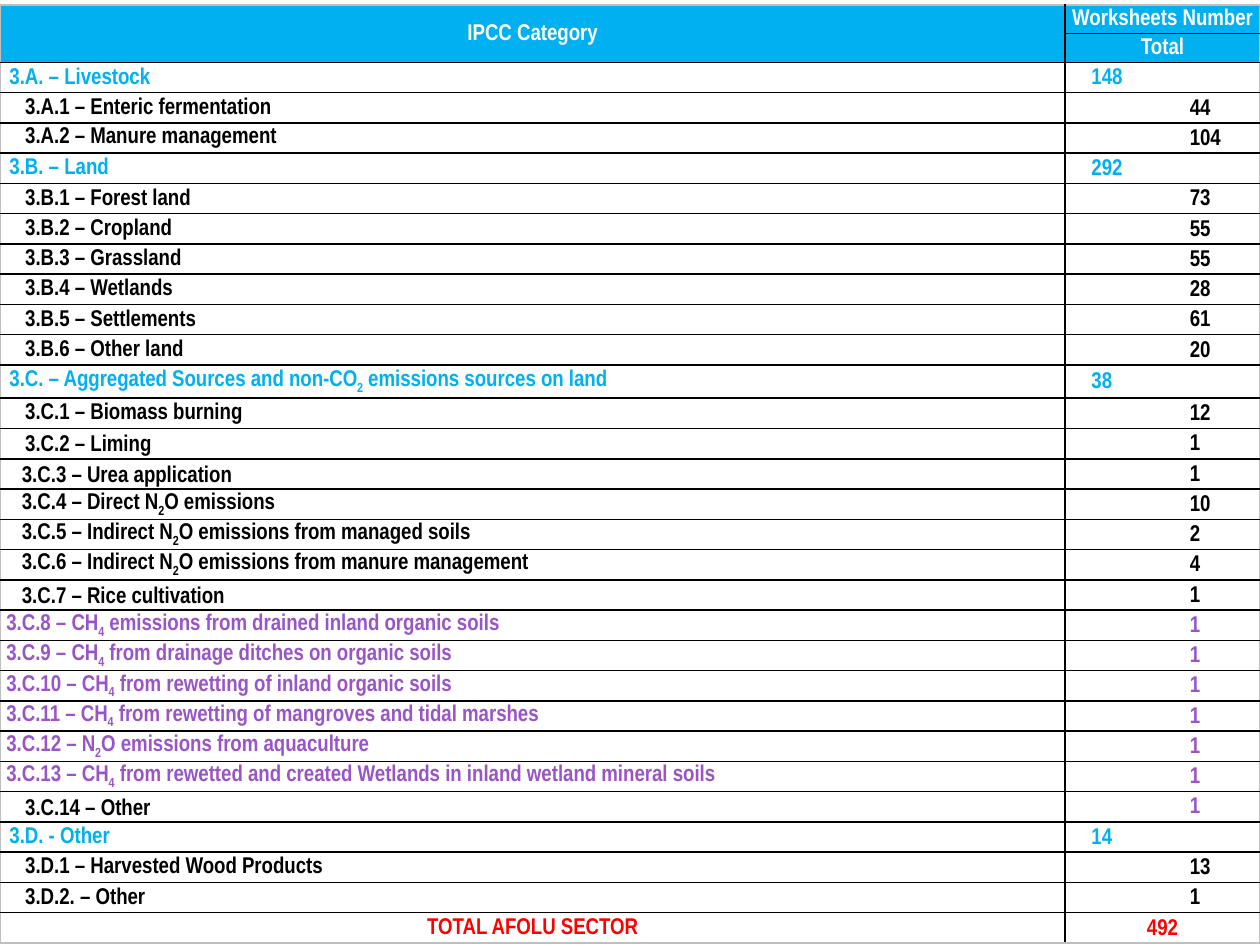
from dataclasses import dataclass, replace
from pptx import Presentation
from pptx.dml.color import RGBColor
from pptx.enum.text import MSO_ANCHOR, PP_ALIGN
from pptx.oxml import parse_xml
from pptx.oxml.ns import nsdecls
from pptx.util import Pt

WHITE = RGBColor(0xFF, 0xFF, 0xFF)
BLACK = RGBColor(0, 0, 0)
BLUE = RGBColor(0x00, 0xB0, 0xF0)
PURPLE = RGBColor(0x99, 0x54, 0xC8)
RED = RGBColor(0xFF, 0, 0)
GRAY = RGBColor(0xBF, 0xBF, 0xBF)

NARROW, WIDE = (0.72, 0.72), (5.4, 0)  # side and top cell margins


@dataclass(frozen=True)
class RowStyle:
    color: RGBColor
    number_color: RGBColor
    margins: tuple = WIDE
    indent: float = 9
    number_indent: float = 70.56
    spacing: object = 1.07
    align: PP_ALIGN = PP_ALIGN.LEFT


ITEM = RowStyle(BLACK, BLACK)
TIGHT = replace(ITEM, spacing=None)
SECTION = RowStyle(BLUE, BLUE, indent=0, number_indent=14.4)
FIXED = replace(ITEM, spacing=Pt(15))
GAS = replace(FIXED, margins=NARROW, indent=11.8)
NEW = replace(GAS, color=PURPLE, number_color=PURPLE, indent=2.9)
LAST = replace(FIXED, number_color=PURPLE)
TOTAL = RowStyle(RED, RED, indent=0, number_indent=0, align=PP_ALIGN.CENTER)

# Category ("_" lowers the next character), number of worksheets, style
ROWS = [
    ("3.A. – Livestock", 148, SECTION),
    ("3.A.1 – Enteric fermentation", 44, ITEM),
    ("3.A.2 – Manure management", 104, TIGHT),
    ("3.B. – Land", 292, SECTION),
    ("3.B.1 – Forest land", 73, ITEM),
    ("3.B.2 – Cropland", 55, ITEM),
    ("3.B.3 – Grassland", 55, ITEM),
    ("3.B.4 – Wetlands", 28, ITEM),
    ("3.B.5 – Settlements", 61, ITEM),
    ("3.B.6 – Other land", 20, ITEM),
    ("3.C. – Aggregated Sources and non-CO_2 emissions sources on land", 38, SECTION),
    ("3.C.1 – Biomass burning", 12, ITEM),
    ("3.C.2 – Liming", 1, FIXED),
    ("3.C.3 – Urea application", 1, GAS),
    ("3.C.4 – Direct N_2O emissions", 10, GAS),
    ("3.C.5 – Indirect N_2O emissions from managed soils", 2, GAS),
    ("3.C.6 – Indirect N_2O emissions from manure management", 4, GAS),
    ("3.C.7 – Rice cultivation", 1, GAS),
    ("3.C.8 – CH_4 emissions from drained inland organic soils", 1, NEW),
    ("3.C.9 – CH_4 from drainage ditches on organic soils", 1, NEW),
    ("3.C.10 – CH_4 from rewetting of inland organic soils", 1, NEW),
    ("3.C.11 – CH_4 from rewetting of mangroves and tidal marshes", 1, NEW),
    ("3.C.12 – N_2O emissions from aquaculture", 1, NEW),
    ("3.C.13 – CH_4 from rewetted and created Wetlands in inland wetland mineral soils", 1, NEW),
    ("3.C.14 – Other", 1, LAST),
    ("3.D. - Other", 14, SECTION),
    ("3.D.1 – Harvested Wood Products", 13, ITEM),
    ("3.D.2. – Other", 1, ITEM),
    ("TOTAL AFOLU SECTOR", 492, TOTAL),
]
HEADER_ROWS = 2
HEADER_HEIGHT, ROW_HEIGHT, TALL_HEIGHT = 16.4, 17.3, 19
TALL_ROW = 10  # the section whose title holds a subscript


class SlideBuilder:
    font, size = "Arial Narrow", Pt(13)

    def __init__(self, prs):
        self.slide = prs.slides.add_slide(prs.slide_layouts[6])

    def table(self, left, top, widths, heights):
        table = self.slide.shapes.add_table(
            len(heights), len(widths), Pt(left), Pt(top),
            Pt(sum(widths)), Pt(sum(heights))).table
        for column, width in zip(table.columns, widths):
            column.width = Pt(width)
        for row, height in zip(table.rows, heights):
            row.height = Pt(height)
        # Black rules inside, gray frame outside
        for i in range(len(heights)):
            for j in range(len(widths)):
                edges = {"L": j == 0, "R": j == len(widths) - 1,
                         "T": i == 0, "B": i == len(heights) - 1}
                self.borders(table.cell(i, j), edges)
        return table

    def borders(self, cell, edges):
        tc_pr = cell._tc.get_or_add_tcPr()
        for side, outer in edges.items():
            tc_pr.append(parse_xml(
                f'<a:ln{side} {nsdecls("a")} w="{Pt(1)}"><a:solidFill>'
                f'<a:srgbClr val="{GRAY if outer else BLACK}"/></a:solidFill></a:ln{side}>'))

    def cell(self, cell, text, color, fill=WHITE, margins=NARROW, indent=0,
             spacing=None, align=PP_ALIGN.LEFT):
        cell.fill.solid()
        cell.fill.fore_color.rgb = fill
        cell.vertical_anchor = MSO_ANCHOR.MIDDLE
        side, top = margins
        cell.margin_left = cell.margin_right = Pt(side)
        cell.margin_top, cell.margin_bottom = Pt(top), 0
        p = cell.text_frame.paragraphs[0]
        p.alignment = align
        if indent:
            p._p.get_or_add_pPr().set("marL", str(Pt(indent)))
        if spacing:
            p.line_spacing = spacing
            p.space_after = Pt(8)
        p.font.name, p.font.size, p.font.bold = self.font, self.size, True
        p.font.color.rgb = color
        first, *rest = text.split("_")
        p.add_run().text = first
        for part in rest:
            r = p.add_run()
            r.text = part[0]
            r._r.get_or_add_rPr().set("baseline", "-25000")
            p.add_run().text = part[1:]


def main():
    prs = Presentation()
    prs.slide_width, prs.slide_height = Pt(720), Pt(540)
    builder = SlideBuilder(prs)

    heights = [HEADER_HEIGHT] * HEADER_ROWS + [ROW_HEIGHT] * len(ROWS)
    heights[HEADER_ROWS + TALL_ROW] = TALL_HEIGHT
    table = builder.table(0, 2.88, [608.6, 111.4], heights)

    # Header
    table.cell(0, 0).merge(table.cell(1, 0))
    for i, j, text in [(0, 0, "IPCC Category"), (0, 1, "Worksheets Number"), (1, 1, "Total")]:
        builder.cell(table.cell(i, j), text, WHITE, fill=BLUE, align=PP_ALIGN.CENTER)

    # Categories and worksheet numbers
    for i, (category, number, style) in enumerate(ROWS, HEADER_ROWS):
        builder.cell(table.cell(i, 0), category, style.color, margins=style.margins,
                     indent=style.indent, spacing=style.spacing, align=style.align)
        builder.cell(table.cell(i, 1), str(number), style.number_color,
                     indent=style.number_indent, spacing=1.07, align=style.align)

    prs.save("out.pptx")


if __name__ == "__main__":
    main()
